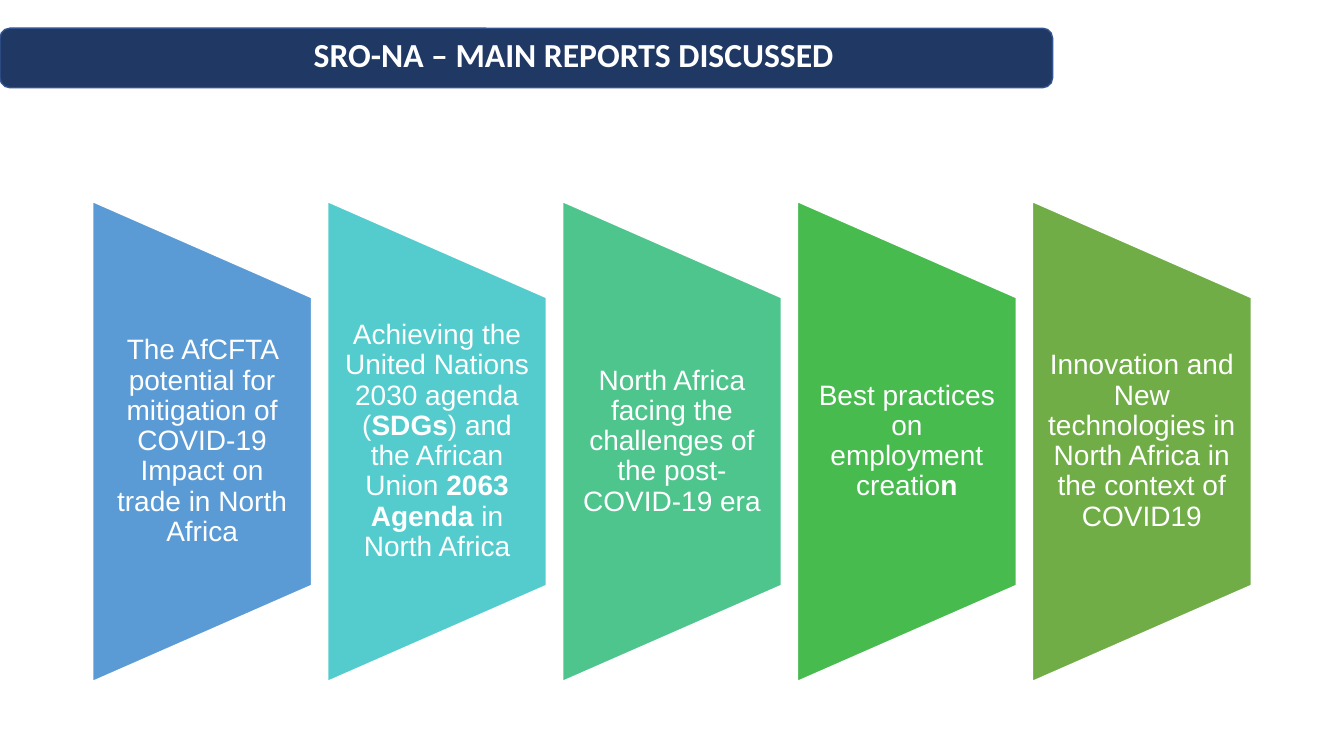
from pptx import Presentation
from pptx.dml.color import RGBColor
from pptx.enum import shapes, text
from pptx.util import Inches, Pt

HUES = {
    "navy": "203864", "edge": "325491", "white": "FFFFFF",
    "blue": "5B9BD5", "teal": "54CCCD", "mint": "4DC58D",
    "green": "48BB4F", "olive": "70AD47",
}
# Each report: panel colour, then (words, bold) runs
REPORTS = [
    ("blue", [("The AfCFTA potential for mitigation of COVID-19 Impact on trade in North Africa", False)]),
    ("teal", [("Achieving the United Nations 2030 agenda (", False), ("SDGs", True),
              (") and the African Union ", False), ("2063 Agenda", True),
              (" in North Africa", False)]),
    ("mint", [("North Africa facing the challenges of the post-COVID-19 era", False)]),
    ("green", [("Best practices on employment creatio", False), ("n", True)]),
    ("olive", [("Innovation and New technologies in North Africa in the context of COVID19", False)]),
]
LEFT, STEP = 0.92, 2.33
WIDE, TALL, MID = 2.17, 4.76, 4.38

deck = Presentation()
deck.slide_width, deck.slide_height = Inches(13.33), Inches(7.5)
slide = deck.slides.add_slide(deck.slide_layouts[6])


def add_shape(kind, left, top, width, height, fill, line):
    shape = slide.shapes.add_shape(
        kind, Inches(left), Inches(top), Inches(width), Inches(height))
    shape.shadow.inherit = False
    shape.fill.solid()
    shape.fill.fore_color.rgb = RGBColor.from_string(HUES[fill])
    shape.line.color.rgb = RGBColor.from_string(HUES[line])
    shape.line.width = Pt(1)
    return shape


def add_text(left, top, width, height, runs, face, size):
    """Add a wrapped text box with one centred white paragraph."""
    box = slide.shapes.add_textbox(
        Inches(left), Inches(top), Inches(width), Inches(height))
    frame = box.text_frame
    frame.word_wrap = True
    para = frame.paragraphs[0]
    para.alignment = text.PP_ALIGN.CENTER
    para.font.name, para.font.size = face, Pt(size)
    para.font.color.rgb = RGBColor.from_string(HUES["white"])
    for words, bold in runs:
        run = para.add_run()
        run.text = words
        run.font.bold = bold
    return frame


# Title bar
add_shape(shapes.MSO_SHAPE.ROUNDED_RECTANGLE, 0, 0.28, 10.44, 0.59, "navy", "edge")
title = add_text(0.96, 0.29, 9.07, 0.5,
                 [("SRO-NA – MAIN REPORTS DISCUSSED", True)], "Calibri", 24)
props = title.paragraphs[0]._p.get_or_add_pPr()
props.set("marL", str(Inches(0.39)))
props.set("indent", "0")

# Report panels, each turned on its side about its own centre
for i, (hue, runs) in enumerate(REPORTS):
    left = LEFT + i * STEP
    panel = add_shape(shapes.MSO_SHAPE.FLOWCHART_MANUAL_OPERATION,
                      left + (WIDE - TALL) / 2, MID - WIDE / 2, TALL, WIDE, hue, "white")
    panel.rotation = 270
    frame = add_text(left, 2.95, WIDE, 2.86, runs, "Arial", 20)
    frame.vertical_anchor = text.MSO_ANCHOR.MIDDLE
    frame.margin_left = frame.margin_right = Inches(0.14)
    frame.margin_top = frame.margin_bottom = 0
    frame.paragraphs[0].line_spacing = 0.9

deck.save("out.pptx")
